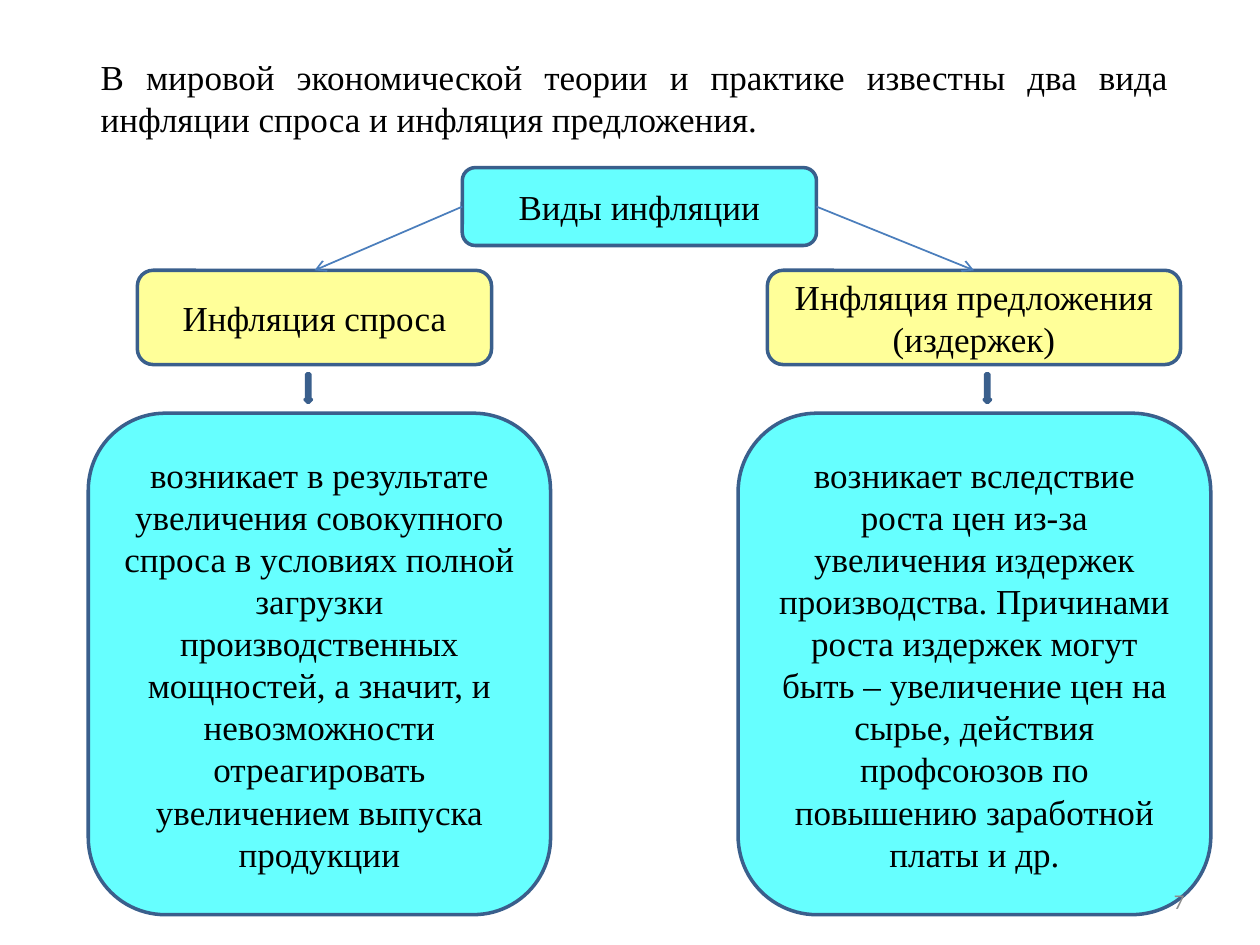
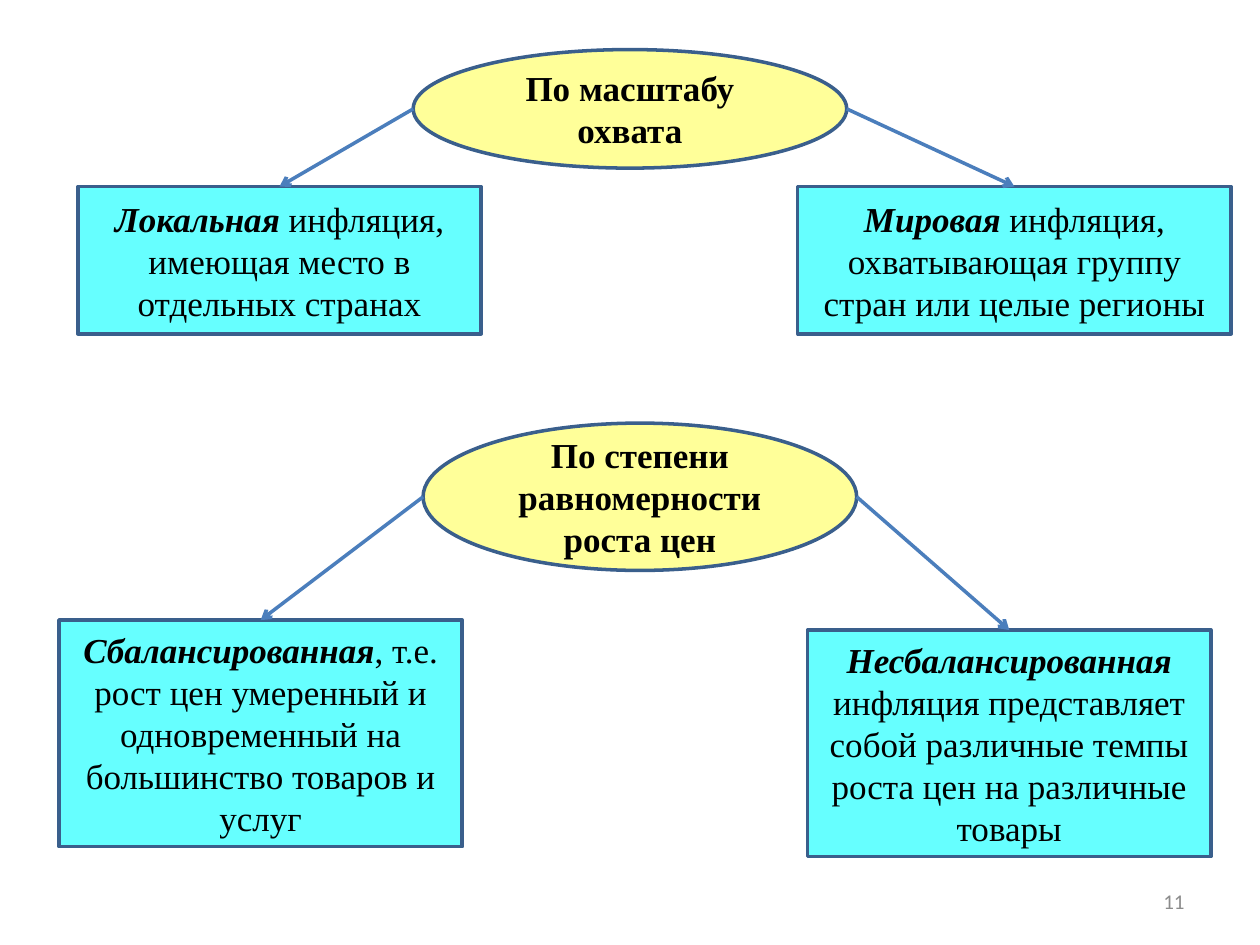
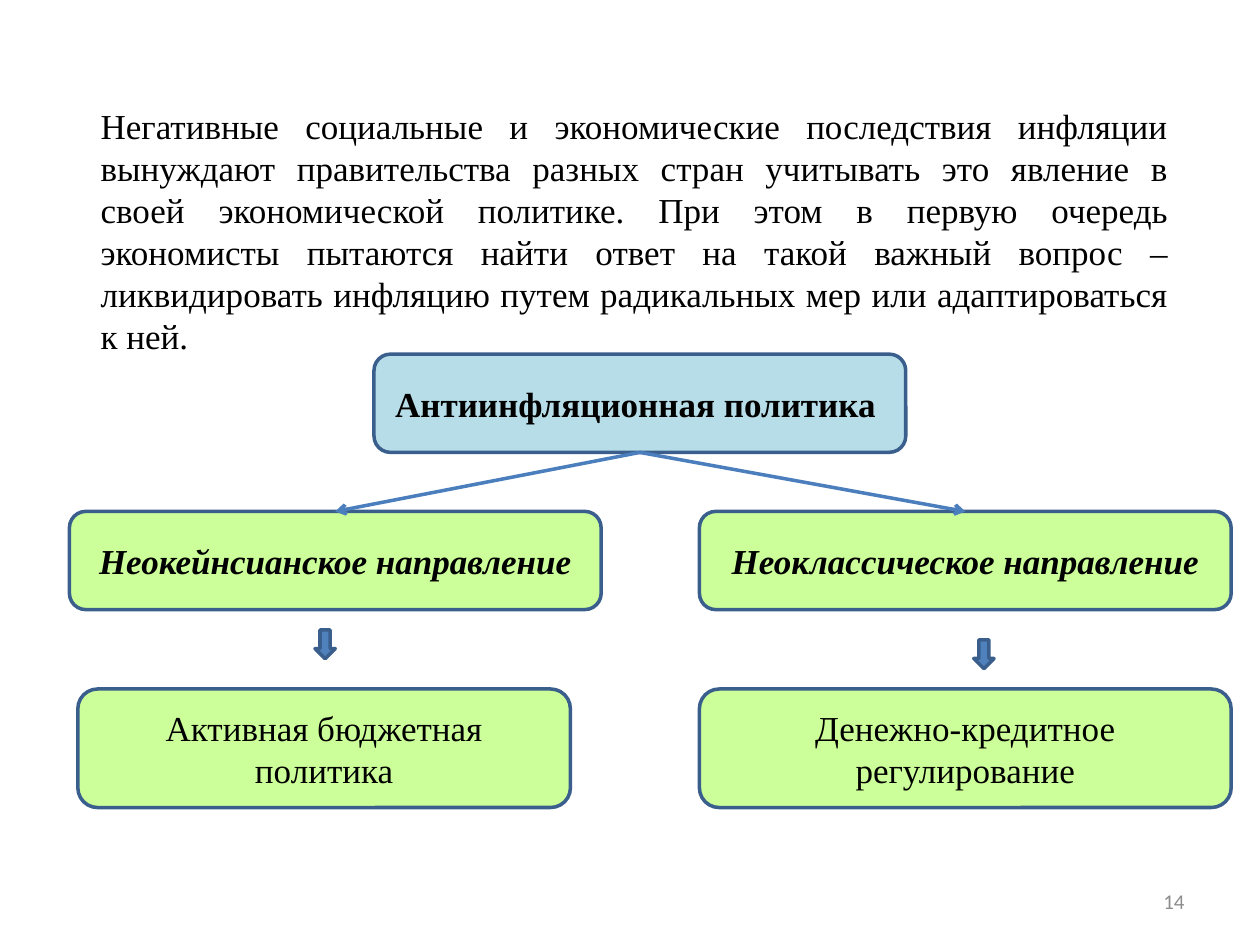
from dataclasses import dataclass

from lxml.etree import SubElement
from pptx import Presentation
from pptx.dml.color import RGBColor
from pptx.enum.shapes import MSO_CONNECTOR, MSO_SHAPE as Preset
from pptx.enum.text import MSO_ANCHOR as Anchor, PP_ALIGN as Align
from pptx.oxml.ns import qn
from pptx.util import Cm, Pt

BLACK = RGBColor(0x00, 0x00, 0x00)
GRAY = RGBColor(0x8C, 0x8C, 0x8C)
CYAN = RGBColor(0x66, 0xFF, 0xFF)
YELLOW = RGBColor(0xFF, 0xFF, 0x99)
GREEN = RGBColor(0xCC, 0xFF, 0x99)
PALE_BLUE = RGBColor(0xB7, 0xDE, 0xE8)
BLUE = RGBColor(0x4F, 0x81, 0xBD)
OUTLINE = RGBColor(0x3A, 0x5F, 0x8C)
BRANCH_LINE = RGBColor(0x4B, 0x7E, 0xBC)

BODY_FONT = "Times New Roman"
NUMBER_FONT = "Calibri"
NUMBER_BOX = (18.21, 17.65, 5.92, 1.02)
TOP, LEFT, BOTTOM, RIGHT = range(4)
BOLD, ITALIC = "bold", "italic"
TERM = (BOLD, ITALIC)


@dataclass
class Node:
    """A box in centimetres; runs are (text, *styles) tuples."""
    runs: list
    box: tuple
    fill: RGBColor
    preset: Preset = Preset.ROUNDED_RECTANGLE


@dataclass
class Tree:
    root: Node
    branches: list
    sides: tuple = (LEFT, RIGHT)
    line_width: float = 2


SLIDES = [
    {
        "number": 7,
        "intro": ("В мировой экономической теории и практике известны два вида "
                  "инфляции спроса и инфляция предложения.", (1.78, 1, 22.02, 1.96)),
        "trees": [Tree(
            Node([("Виды инфляции",)], (9.32, 3.38, 7.14, 1.57), CYAN),
            [Node([("Инфляция спроса",)], (2.77, 5.45, 7.14, 1.9), YELLOW),
             Node([("Инфляция предложения (издержек)",)], (15.47, 5.45, 8.33, 1.9), YELLOW)],
            line_width=1)],
        "details": [
            Node([("возникает в результате увеличения совокупного спроса в условиях "
                   "полной загрузки производственных мощностей, а значит, и "
                   "невозможности отреагировать увеличением выпуска продукции",)],
                 (1.78, 8.33, 9.32, 10.11), CYAN),
            Node([("возникает вследствие роста цен из-за увеличения издержек "
                   "производства. Причинами роста издержек могут быть – увеличение "
                   "цен на сырье, действия профсоюзов по повышению заработной "
                   "платы и др.",)],
                 (14.88, 8.33, 9.53, 10.11), CYAN)],
        "down_arrows": [(6.15, 7.54, 0.13, 0.58), (19.84, 7.54, 0.13, 0.58)],
    },
    {
        "number": 11,
        "trees": [
            Tree(Node([("По масштабу охвата", BOLD)], (8.33, 1, 8.74, 2.39),
                      YELLOW, Preset.OVAL),
                 [Node([("Локальная", *TERM),
                        (" инфляция, имеющая место в отдельных странах",)],
                       (1.57, 3.76, 8.13, 2.97), CYAN, Preset.RECTANGLE),
                  Node([("Мировая ", *TERM),
                        ("инфляция, охватывающая группу стран или целые регионы",)],
                       (16.08, 3.76, 8.74, 2.97), CYAN, Preset.RECTANGLE)]),
            Tree(Node([("По степени равномерности роста цен", BOLD)],
                      (8.53, 8.53, 8.74, 2.97), YELLOW, Preset.OVAL),
                 [Node([("Сбалансированная", *TERM),
                        (", т.е. рост цен умеренный и одновременный на большинство "
                         "товаров и услуг",)],
                       (1.19, 12.5, 8.13, 4.57), CYAN, Preset.RECTANGLE),
                  Node([("Несбалансированная", *TERM),
                        (" инфляция представляет собой различные темпы роста цен "
                         "на различные товары",)],
                       (16.28, 12.7, 8.13, 4.57), CYAN, Preset.RECTANGLE)])],
    },
    {
        "number": 14,
        "intro": ("Негативные социальные и экономические последствия инфляции "
                  "вынуждают правительства разных стран учитывать это явление в своей "
                  "экономической политике. При этом в первую очередь экономисты "
                  "пытаются найти ответ на такой важный вопрос – ликвидировать "
                  "инфляцию путем радикальных мер или адаптироваться к ней.",
                  (1.78, 1.98, 22.02, 5.38)),
        "trees": [Tree(
            Node([("Антиинфляционная политика ", BOLD)], (7.54, 7.14, 10.72, 1.98), PALE_BLUE),
            [Node([("Неокейнсианское направление", *TERM)], (1.4, 10.31, 10.72, 1.98), GREEN),
             Node([("Неоклассическое направление", *TERM)], (14.1, 10.31, 10.72, 1.98), GREEN)],
            sides=(BOTTOM, BOTTOM))],
        "details": [
            Node([("Активная бюджетная политика",)], (1.57, 13.89, 9.93, 2.39), GREEN),
            Node([("Денежно-кредитное регулирование",)], (14.1, 13.89, 10.72, 2.39), GREEN)],
        "down_arrows": [(6.35, 12.7, 0.41, 0.58), (19.63, 12.9, 0.41, 0.58)],
    },
]


def to_cm(box):
    return [Cm(length) for length in box]


def write_text(shape, runs, *, size=20, font=BODY_FONT, color=BLACK,
               align=Align.CENTER, anchor=Anchor.MIDDLE):
    frame = shape.text_frame
    frame.word_wrap = True
    frame.vertical_anchor = anchor
    paragraph = frame.paragraphs[0]
    paragraph.alignment = align
    for text, *styles in runs:
        run = paragraph.add_run()
        run.text = text
        run.font.name = font
        run.font.size = Pt(size)
        run.font.color.rgb = color
        run.font.bold = BOLD in styles
        run.font.italic = ITALIC in styles


def add_text_box(slide, text, box, **text_format):
    write_text(slide.shapes.add_textbox(*to_cm(box)), [(text,)], **text_format)


def add_outlined_shape(slide, preset, box, fill):
    shape = slide.shapes.add_shape(preset, *to_cm(box))
    shape.shadow.inherit = False
    shape.fill.solid()
    shape.fill.fore_color.rgb = fill
    shape.line.color.rgb = OUTLINE
    shape.line.width = Pt(2)
    return shape


def add_node(slide, node):
    shape = add_outlined_shape(slide, node.preset, node.box, node.fill)
    write_text(shape, node.runs)
    return shape


def side_middle(shape, side):
    center_x = shape.left + shape.width // 2
    center_y = shape.top + shape.height // 2
    return {
        TOP: (center_x, shape.top),
        LEFT: (shape.left, center_y),
        BOTTOM: (center_x, shape.top + shape.height),
        RIGHT: (shape.left + shape.width, center_y),
    }[side]


def add_branch_arrow(slide, root, side, branch, width):
    connector = slide.shapes.add_connector(
        MSO_CONNECTOR.STRAIGHT, *side_middle(root, side), *side_middle(branch, TOP))
    # An ellipse numbers its connection sites differently, so its arrow is only placed.
    if root.auto_shape_type != Preset.OVAL:
        connector.begin_connect(root, side)
    connector.end_connect(branch, TOP)
    connector.line.color.rgb = BRANCH_LINE
    connector.line.width = Pt(width)
    SubElement(connector.line._get_or_add_ln(), qn("a:tailEnd"), type="arrow")
    SubElement(connector._element.spPr, qn("a:effectLst"))


def add_tree(slide, tree):
    root = add_node(slide, tree.root)
    for node, side in zip(tree.branches, tree.sides):
        add_branch_arrow(slide, root, side, add_node(slide, node), tree.line_width)


def build_slide(presentation, content):
    slide = presentation.slides.add_slide(presentation.slide_layouts[6])
    if "intro" in content:
        add_text_box(slide, *content["intro"], align=Align.JUSTIFY, anchor=Anchor.TOP)
    for tree in content["trees"]:
        add_tree(slide, tree)
    for node in content.get("details", []):
        add_node(slide, node)
    for box in content.get("down_arrows", []):
        add_outlined_shape(slide, Preset.DOWN_ARROW, box, BLUE)
    add_text_box(slide, str(content["number"]), NUMBER_BOX, size=12,
                 font=NUMBER_FONT, color=GRAY, align=Align.RIGHT)


def main():
    presentation = Presentation()
    presentation.slide_width = Cm(25.4)
    presentation.slide_height = Cm(19.05)
    for content in SLIDES:
        build_slide(presentation, content)
    presentation.save("out.pptx")


if __name__ == "__main__":
    main()
